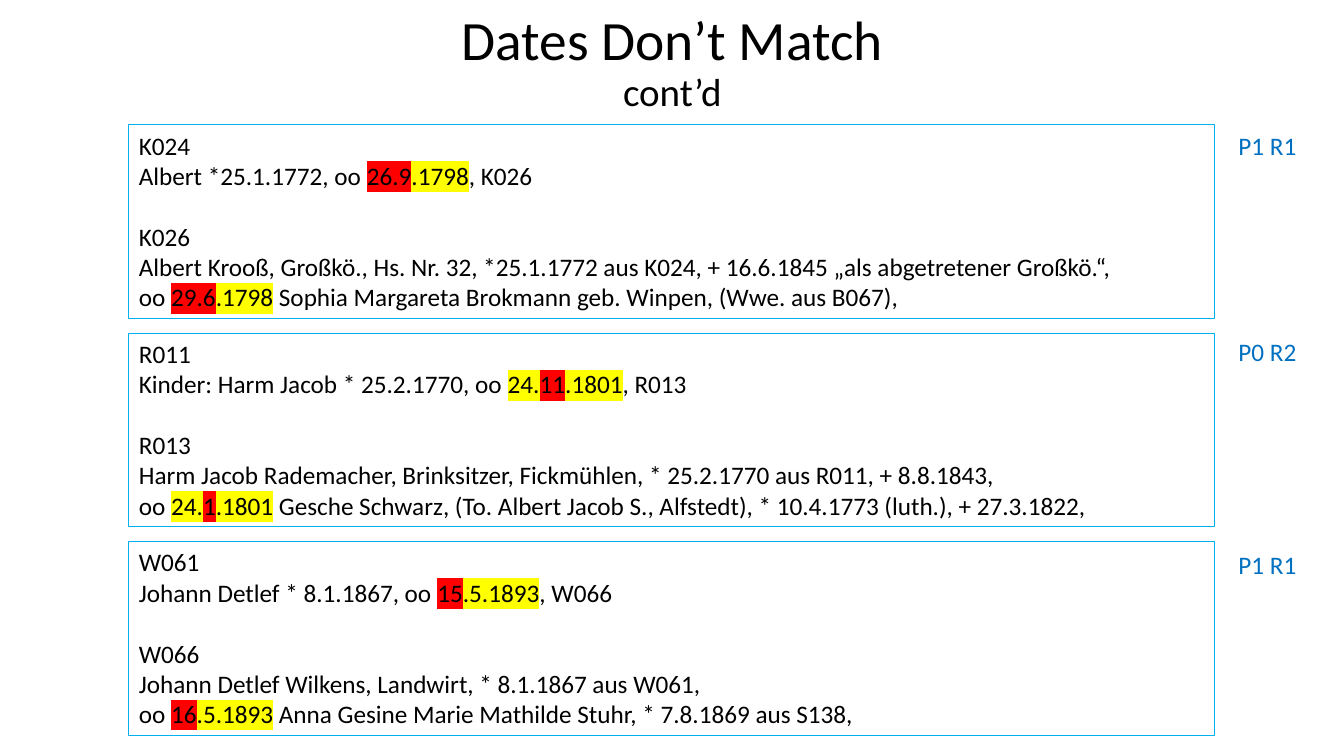
from lxml.etree import SubElement
from pptx import Presentation
from pptx.dml.color import RGBColor
from pptx.enum.shapes import MSO_SHAPE
from pptx.enum.text import MSO_ANCHOR, MSO_AUTO_SIZE, PP_ALIGN
from pptx.oxml.ns import qn
from pptx.util import Cm, Pt

RED, YELLOW = "FF0000", "FFFF00"


def rgb(color):
    return RGBColor.from_string(color)


def style(r, size, color="000000", highlight=None):
    r.font.name = "Calibri"
    r.font.size = Pt(size)
    r.font.color.rgb = rgb(color)
    if highlight:
        rPr = r.font._element
        hl = SubElement(rPr, qn("a:highlight"))
        SubElement(hl, qn("a:srgbClr"), val=highlight)
        rPr.find(qn("a:solidFill")).addnext(hl)


records = [
    ("P1 R1", 3.15, [
        [("K024", None)],
        [("Albert *25.1.1772, oo ", None), ("26.9", RED), (".1798", YELLOW), (", K026", None)],
        [("K026", None)],
        [("Albert Krooß, Großkö., Hs. Nr. 32, *25.1.1772 aus K024, + 16.6.1845 „als abgetretener Großkö.“,", None)],
        [("oo ", None), ("29.6", RED), (".1798", YELLOW),
         (" Sophia Margareta Brokmann geb. Winpen, (Wwe. aus B067),", None)],
    ]),
    ("P0 R2", 8.36, [
        [("R011", None)],
        [("Kinder: Harm Jacob * 25.2.1770, oo ", None), ("24.", YELLOW), ("11", RED),
         (".1801", YELLOW), (", R013", None)],
        [("R013", None)],
        [("Harm Jacob Rademacher, Brinksitzer, Fickmühlen, * 25.2.1770 aus R011, + 8.8.1843,", None)],
        [("oo ", None), ("24.", YELLOW), ("1", RED), (".1801", YELLOW),
         (" Gesche Schwarz, (To. Albert Jacob S., Alfstedt), * 10.4.1773 (luth.), + 27.3.1822,", None)],
    ]),
    ("P1 R1", 13.72, [
        [("W061", None)],
        [("Johann Detlef * 8.1.1867, oo ", None), ("15", RED), (".5.1893", YELLOW), (", W066", None)],
        [("W066", None)],
        [("Johann Detlef Wilkens, Landwirt, * 8.1.1867 aus W061,", None)],
        [("oo ", None), ("16", RED), (".5.1893", YELLOW),
         (" Anna Gesine Marie Mathilde Stuhr, * 7.8.1869 aus S138,", None)],
    ]),
]

prs = Presentation()
prs.slide_width, prs.slide_height = Cm(33.87), Cm(19.05)
s = prs.slides.add_slide(prs.slide_layouts[5])

title = s.shapes.title
title.left, title.top, title.width, title.height = Cm(0.46), Cm(0.46), Cm(32.97), Cm(2.29)
tf = title.text_frame
tf.text = "Dates Don’t Match\vcont’d"
tf.auto_size = MSO_AUTO_SIZE.NONE
tf.vertical_anchor = MSO_ANCHOR.MIDDLE
p = tf.paragraphs[0]
p.alignment = PP_ALIGN.CENTER
p.line_spacing = 0.9
for r, size in zip(p.runs, (39.6, 27.9)):
    style(r, size)
SubElement(p._p.find(qn("a:br")), qn("a:rPr"), sz="3960")

for i, (label, label_top, lines) in enumerate(records):
    sp = s.shapes.add_shape(MSO_SHAPE.RECTANGLE, Cm(3.25), Cm(3.15 + 5.25 * i), Cm(27.36), Cm(4.88))
    sp.shadow.inherit = False
    sp.fill.background()
    sp.line.color.rgb = rgb("00B0F0")
    sp.line.width = Pt(0.75)
    tf = sp.text_frame
    tf.word_wrap = True
    tf.vertical_anchor = MSO_ANCHOR.TOP
    for n, line in enumerate(lines):
        p = tf.paragraphs[0] if n == 0 else tf.add_paragraph()
        p.alignment = PP_ALIGN.LEFT
        if n == 2:
            p.space_before = Pt(22)
        for text, highlight in line:
            r = p.add_run()
            r.text = text
            style(r, 18, highlight=highlight)

    tb = s.shapes.add_textbox(Cm(30.96), Cm(label_top), Cm(1.98), Cm(1.02))
    tf = tb.text_frame
    tf.text = label
    tf.word_wrap = False
    style(tf.paragraphs[0].runs[0], 18, "0070C0")

prs.save("out.pptx")
